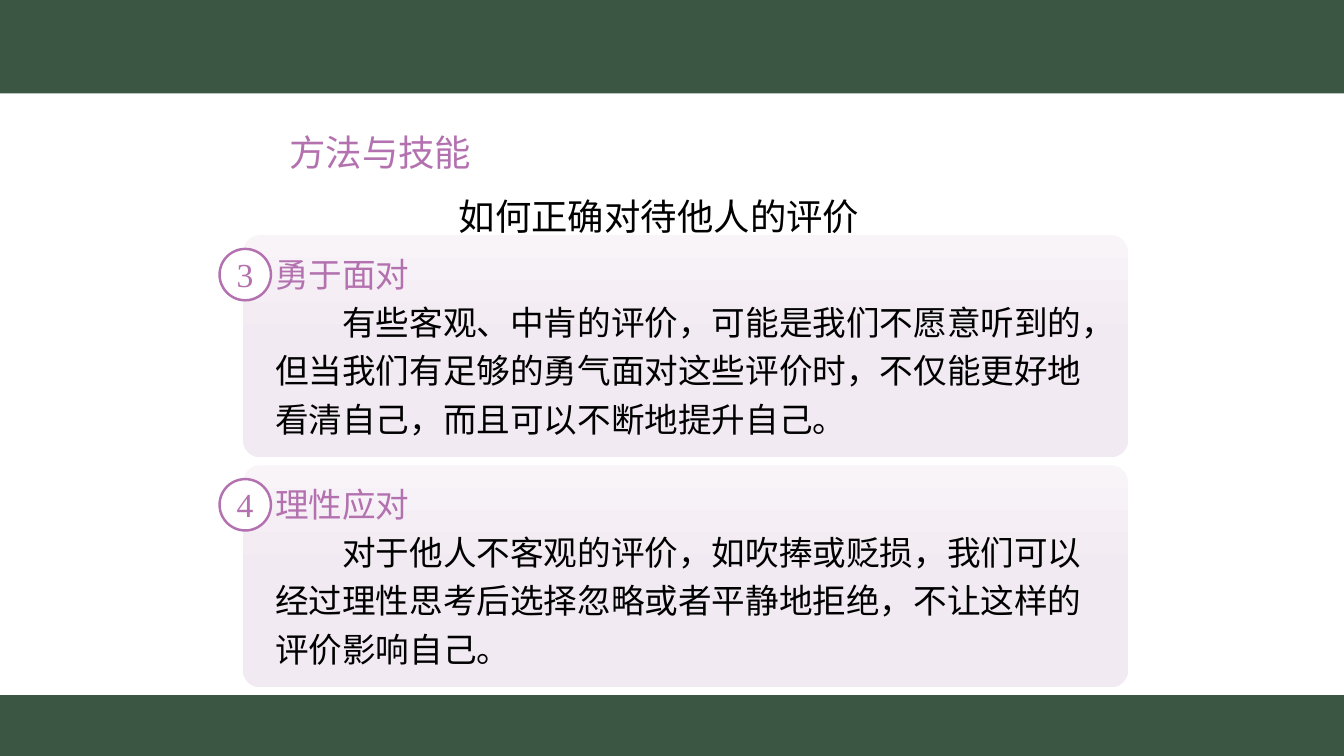
from copy import deepcopy

from pptx import Presentation
from pptx.dml.color import RGBColor
from pptx.enum.shapes import MSO_SHAPE as Shape
from pptx.enum.text import PP_ALIGN as Align
from pptx.oxml.ns import qn
from pptx.util import Pt

GREEN = RGBColor(0x3B, 0x56, 0x43)
PURPLE = RGBColor(0xB3, 0x71, 0xAF)
BLACK = RGBColor(0x00, 0x00, 0x00)
WHITE = RGBColor(0xFF, 0xFF, 0xFF)
CARD_COLORS = (
    RGBColor(0xF8, 0xF4, 0xF8),
    RGBColor(0xF2, 0xEA, 0xF2),
    RGBColor(0xF1, 0xE7, 0xF1),
)
CARD_PITCH = 164.4
CARDS = (
    ("3", 616.3, (
        ("勇于面对", PURPLE, 0),
        ("有些客观、中肯的评价，可能是我们不愿意听到的，但当我们有足够的勇气面对这些评价时，不仅能更好地", BLACK, 48),
        ("看清自己，而且可以不断地提升自己。", BLACK, 0),
    )),
    ("4", 607.7, (
        ("理性应对", PURPLE, 0),
        ("对于他人不客观的评价，如吹捧或贬损，我们可以经过理性思考后选择忽略或者平静地拒绝，不让这样的评价影响自己。", BLACK, 48),
    )),
)


class SlideBuilder:
    """Draws styled elements on one slide, with lengths in points."""

    def __init__(self, slide, east_asian_font="Noto Sans CJK SC"):
        self.slide = slide
        self.east_asian_font = east_asian_font

    def shape(self, kind, left, top, width, height, fill=None, line=None):
        shape = self.slide.shapes.add_shape(kind, Pt(left), Pt(top), Pt(width), Pt(height))
        shape.shadow.inherit = False
        if fill is not None:
            shape.fill.solid()
            shape.fill.fore_color.rgb = fill
        if line is None:
            shape.line.fill.background()
        else:
            shape.line.color.rgb = line
            shape.line.width = Pt(1.75)
        return shape

    def card(self, left, top, width, height):
        card = self.shape(Shape.ROUNDED_RECTANGLE, left, top, width, height)
        card.adjustments[0] = 0.076
        card.fill.gradient()
        card.fill.gradient_angle = 270
        stops = card._element.spPr.find(qn("a:gradFill")).find(qn("a:gsLst"))
        stops.insert(1, deepcopy(stops[0]))
        for stop, position, color in zip(card.fill.gradient_stops, (0, 0.5, 1), CARD_COLORS):
            stop.position = position
            stop.color.rgb = color

    def text(self, left, top, width, height, lines, size, font, spacing=None,
             align=Align.LEFT, wrap=True, top_inset=3.6):
        box = self.slide.shapes.add_textbox(Pt(left), Pt(top), Pt(width), Pt(height))
        frame = box.text_frame
        frame.word_wrap = wrap
        frame.margin_top = Pt(top_inset)
        frame.text = "\n".join(content for content, _, _ in lines)
        for paragraph, (_, color, indent) in zip(frame.paragraphs, lines):
            paragraph.alignment = align
            if spacing:
                paragraph.line_spacing = Pt(spacing)
            if indent:
                paragraph._p.get_or_add_pPr().set("indent", str(Pt(indent)))
            run = paragraph.runs[0]
            run.font.size = Pt(size)
            run.font.name = font
            run.font.color.rgb = color
            east_asian = run.font._element.makeelement(
                qn("a:ea"), {"typeface": self.east_asian_font})
            run.font._element.find(qn("a:latin")).addnext(east_asian)


def main():
    presentation = Presentation()
    presentation.slide_width = Pt(960)
    presentation.slide_height = Pt(540)
    builder = SlideBuilder(presentation.slides.add_slide(presentation.slide_layouts[6]))

    for top, height in ((0, 66.7), (496.5, 43.5)):
        builder.shape(Shape.RECTANGLE, 0, top, 960, height, GREEN)

    headings = (("方法与技能", PURPLE, 52), ("如何正确对待他人的评价", BLACK, 173))
    builder.text(147.6, 70.6, 658.8, 96.5, headings, 26, "Noto Sans CJK SC",
                 spacing=45.7, top_inset=7.6)

    for index, (number, text_width, lines) in enumerate(CARDS):
        top = 168 + index * CARD_PITCH
        builder.card(173.7, top, 632, 158.4)
        builder.text(189.4, top + 5.5, text_width, 144.7, lines, 24,
                     "Times New Roman", spacing=34.4, top_inset=2.2)
        builder.shape(Shape.OVAL, 156.8, top + 9.8, 36.7, 36.7, WHITE, PURPLE)
        builder.text(161.8, top + 9.8, 26.6, 36, [(number, PURPLE, 0)], 24,
                     "Times New Roman", align=Align.CENTER, wrap=False)

    presentation.save("out.pptx")


if __name__ == "__main__":
    main()
